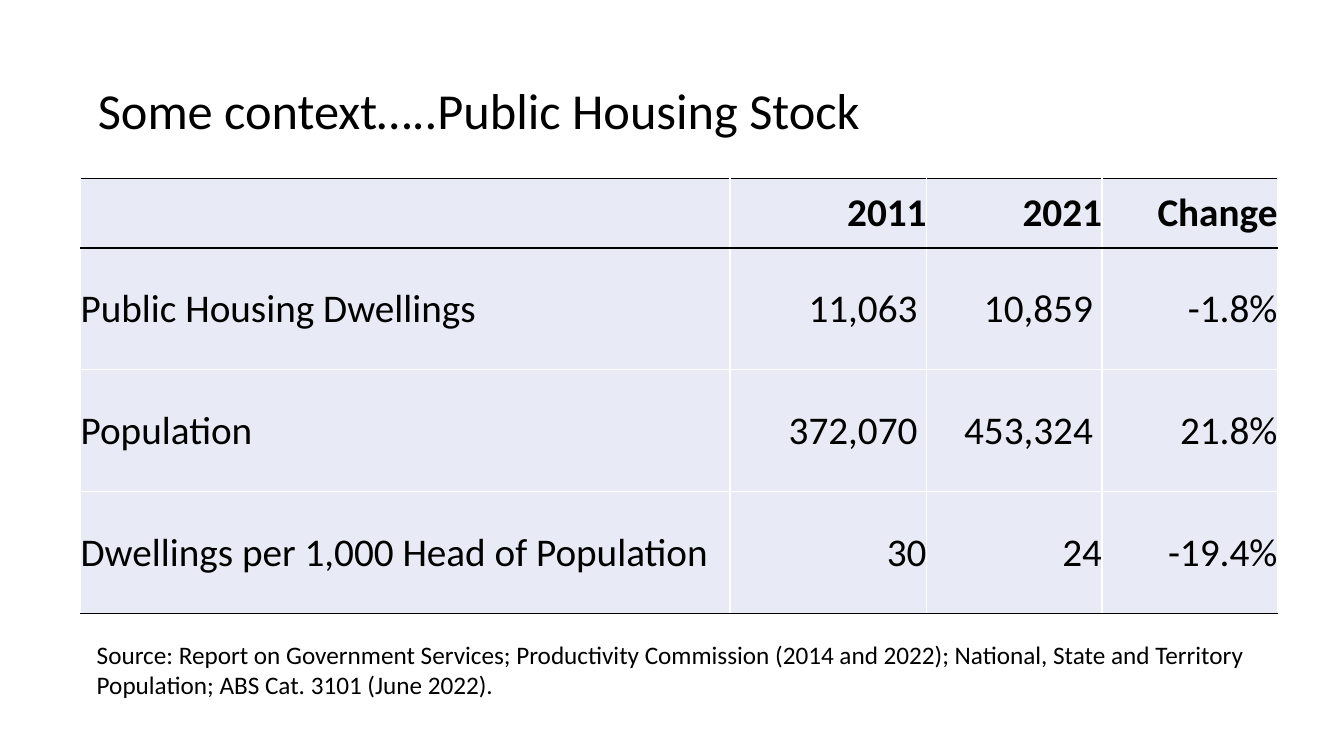
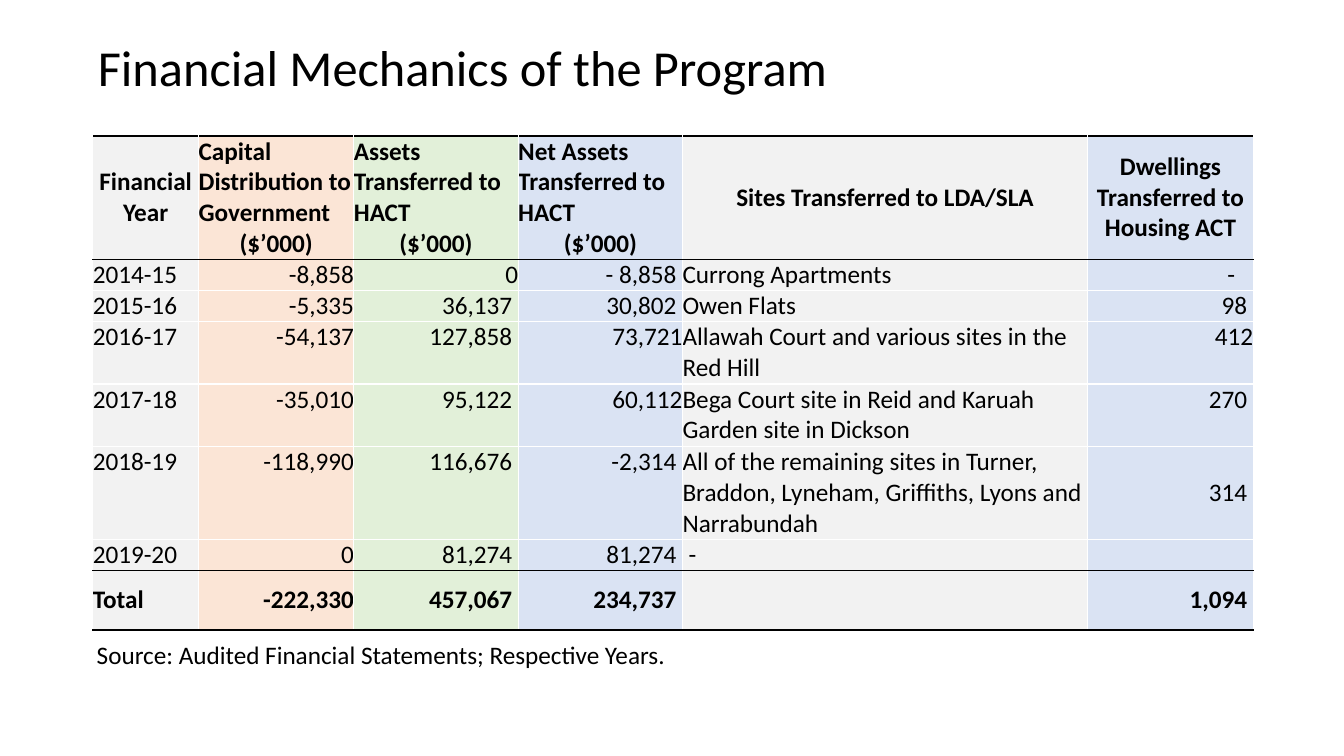
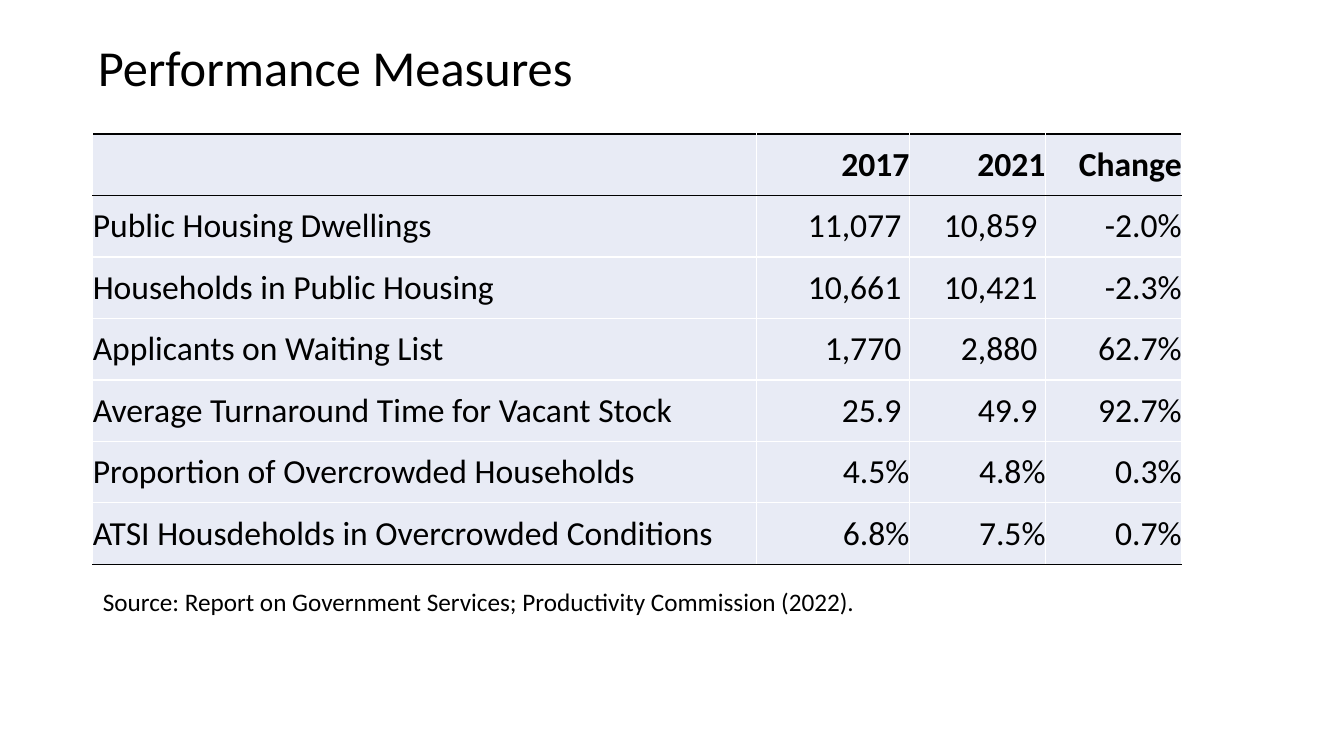
"""Build three slides of public housing tables, each with a title and a source line."""
from dataclasses import dataclass

from lxml import etree
from pptx import Presentation
from pptx.dml.color import RGBColor
from pptx.enum.text import MSO_ANCHOR, MSO_AUTO_SIZE, PP_ALIGN
from pptx.oxml.ns import qn
from pptx.util import Inches, Pt

LEFT, CENTER, RIGHT = PP_ALIGN.LEFT, PP_ALIGN.CENTER, PP_ALIGN.RIGHT
TOP, MIDDLE = MSO_ANCHOR.TOP, MSO_ANCHOR.MIDDLE
NO_AUTOFIT = MSO_AUTO_SIZE.NONE


@dataclass(frozen=True)
class Theme:
    font: str = "Calibri"
    ink: str = "000000"
    rule: str = "FFFFFF"
    lavender: str = "E8EBF5"
    grey: str = "F2F2F2"
    peach: str = "FBE5D6"
    green: str = "E2F0D9"
    blue: str = "DAE3F3"
    title_size: int = 36
    source_size: int = 18
    inset: float = 0.05


THEME = Theme()

SLIDES = [
    {
        "title": "Some context…..Public Housing Stock",
        "title_box": (0.92, 0.4, 11.5, 1.45),
        "source": "Source: Report on Government Services; Productivity Commission (2014 and 2022); "
                  "National, State and Territory Population; ABS Cat. 3101 (June 2022).",
        "source_box": (0.91, 6.29, 11.7, 0.68),
        "origin": (0.8, 1.77),
        "widths": [6.44, 1.95, 1.74, 1.74],
        "heights": [0.69] + [1.21] * 3,
        "size": 28,
        "fills": [THEME.lavender] * 4,
        "aligns": [LEFT, RIGHT, RIGHT, RIGHT],
        "header_align": RIGHT,
        "bold_rows": {0},
        "dark_rules": {0, 1, 4},
        "top_cells": set(),
        "gap": 0.09,
        "gap_cells": {(1, 1), (1, 2), (2, 1), (2, 2)},
        "rows": [
            ["", "2011", "2021", "Change"],
            ["Public Housing Dwellings", "11,063", "10,859", "-1.8%"],
            ["Population", "372,070", "453,324", "21.8%"],
            ["Dwellings per 1,000 Head of Population", "30", "24", "-19.4%"],
        ],
    },
    {
        "title": "Financial Mechanics of the Program",
        "title_box": (0.92, 0.07, 11.5, 1.26),
        "source": "Source: Audited Financial Statements; Respective Years.",
        "source_box": (0.91, 6.29, 11.7, 0.36),
        "origin": (0.92, 1.35),
        "widths": [1.05, 1.54, 1.63, 1.63, 4.02, 1.64],
        "heights": [1.22, 0.31, 0.31, 0.62, 0.62, 0.92, 0.31, 0.59],
        "size": 18,
        "fills": [THEME.grey, THEME.peach, THEME.green, THEME.blue, THEME.grey, THEME.blue],
        "aligns": [LEFT, RIGHT, RIGHT, RIGHT, LEFT, RIGHT],
        "header_align": CENTER,
        "bold_rows": {0, 7},
        "dark_rules": {0, 1, 7, 8},
        "top_cells": {(row, column) for row in range(1, 7) for column in range(6)} - {(5, 5), (6, 4)},
        "gap": 0.06,
        "gap_cells": {(row, 2) for row in range(2, 8)}
                     | {(row, 3) for row in (1, 2, 5, 6, 7)}
                     | {(row, 5) for row in (1, 2, 4, 5, 7)} | {(6, 4)},
        "rows": [
            ["Financial Year", "Capital Distribution to Government\n($’000)",
             "Assets Transferred to HACT\n($’000)", "Net Assets Transferred to HACT\n($’000)",
             "Sites Transferred to LDA/SLA", "Dwellings Transferred to Housing ACT"],
            ["2014-15", "-8,858", "0", "- 8,858", "Currong Apartments", "-"],
            ["2015-16", "-5,335", "36,137", "30,802", "Owen Flats", "98"],
            ["2016-17", "-54,137", "127,858", "73,721",
             "Allawah Court and various sites in the Red Hill", "412"],
            ["2017-18", "-35,010", "95,122", "60,112",
             "Bega Court site in Reid and Karuah Garden site in Dickson", "270"],
            ["2018-19", "-118,990", "116,676", "-2,314",
             "All of the remaining sites in Turner, Braddon, Lyneham, Griffiths, Lyons and Narrabundah",
             "314"],
            ["2019-20", "0", "81,274", "81,274", "-", ""],
            ["Total", "-222,330", "457,067", "234,737", "", "1,094"],
        ],
    },
    {
        "title": "Performance Measures",
        "title_box": (0.92, 0.07, 11.5, 1.26),
        "source": "Source: Report on Government Services; Productivity Commission (2022).",
        "source_box": (0.97, 5.77, 11.7, 0.36),
        "origin": (0.92, 1.33),
        "widths": [6.58, 1.52, 1.35, 1.35],
        "heights": [0.61] * 7,
        "size": 24,
        "fills": [THEME.lavender] * 4,
        "aligns": [LEFT, RIGHT, RIGHT, RIGHT],
        "header_align": RIGHT,
        "bold_rows": {0},
        "dark_rules": {0, 1, 7},
        "top_cells": set(),
        "gap": 0.08,
        "gap_cells": {(row, column) for row in range(1, 5) for column in (1, 2)},
        "rows": [
            ["", "2017", "2021", "Change"],
            ["Public Housing Dwellings", "11,077", "10,859", "-2.0%"],
            ["Households in Public Housing", "10,661", "10,421", "-2.3%"],
            ["Applicants on Waiting List", "1,770", "2,880", "62.7%"],
            ["Average Turnaround Time for Vacant Stock", "25.9", "49.9", "92.7%"],
            ["Proportion of Overcrowded Households", "4.5%", "4.8%", "0.3%"],
            ["ATSI Housdeholds in Overcrowded Conditions", "6.8%", "7.5%", "0.7%"],
        ],
    },
]


def write(frame, text, size, align=LEFT, bold=False, anchor=TOP, insets=(THEME.inset,) * 4):
    """Fill a text frame or cell; lines above the last one of a broken text stay left."""
    frame.margin_left, frame.margin_top, frame.margin_right, frame.margin_bottom = map(Inches, insets)
    frame.vertical_anchor = anchor
    frame.word_wrap = True
    body = getattr(frame, "text_frame", frame)
    lines = text.split("\n")
    for index, line in enumerate(lines):
        paragraph = body.paragraphs[0] if index == 0 else body.add_paragraph()
        paragraph.alignment = align if index == len(lines) - 1 else LEFT
        if line:
            run = paragraph.add_run()
            run.text = line
            run.font.name = THEME.font
            run.font.size = Pt(size)
            run.font.bold = bold
            run.font.color.rgb = RGBColor.from_string(THEME.ink)


def paint(cell, fill, top_rule, bottom_rule):
    """Fill a cell and draw its four one-point borders."""
    cell.fill.solid()
    cell.fill.fore_color.rgb = RGBColor.from_string(fill)
    properties = cell._tc.get_or_add_tcPr()
    edges = (("a:lnL", THEME.rule), ("a:lnR", THEME.rule), ("a:lnT", top_rule), ("a:lnB", bottom_rule))
    for position, (tag, color) in enumerate(edges):
        border = etree.Element(qn(tag), w=str(Pt(1)))
        solid = etree.SubElement(border, qn("a:solidFill"))
        etree.SubElement(solid, qn("a:srgbClr"), val=color)
        properties.insert(position, border)


deck = Presentation()
deck.slide_width, deck.slide_height = Inches(13.33), Inches(7.5)
title_only = deck.slide_layouts[5]

for content in SLIDES:
    slide = deck.slides.add_slide(title_only)
    title = slide.shapes.title
    title.left, title.top, title.width, title.height = map(Inches, content["title_box"])
    write(title.text_frame, content["title"], THEME.title_size, anchor=MIDDLE)
    title.text_frame.auto_size = NO_AUTOFIT
    title.text_frame.paragraphs[0].line_spacing = 0.9

    rows, widths, heights = content["rows"], content["widths"], content["heights"]
    table = slide.shapes.add_table(
        len(rows), len(widths), *map(Inches, (*content["origin"], sum(widths), sum(heights)))
    ).table
    table.horz_banding = False
    for column, width in zip(table.columns, widths):
        column.width = Inches(width)
    for row, height in zip(table.rows, heights):
        row.height = Inches(height)

    rules = [THEME.ink if edge in content["dark_rules"] else THEME.rule for edge in range(len(rows) + 1)]
    for r, values in enumerate(rows):
        for c, value in enumerate(values):
            cell = table.cell(r, c)
            align = content["aligns"][c] if r else content["header_align"]
            gap = content["gap"] if (r, c) in content["gap_cells"] else 0
            if value == "-" and align == RIGHT:
                gap *= 3
            insets = (gap, 0, 0, 0) if align == LEFT else (0, 0, gap, 0)
            anchor = TOP if (r, c) in content["top_cells"] else MIDDLE
            write(cell, value, content["size"], align, r in content["bold_rows"], anchor, insets)
            paint(cell, content["fills"][c], rules[r], rules[r + 1])

    source = slide.shapes.add_textbox(*map(Inches, content["source_box"]))
    write(source.text_frame, content["source"], THEME.source_size)

deck.save("out.pptx")
